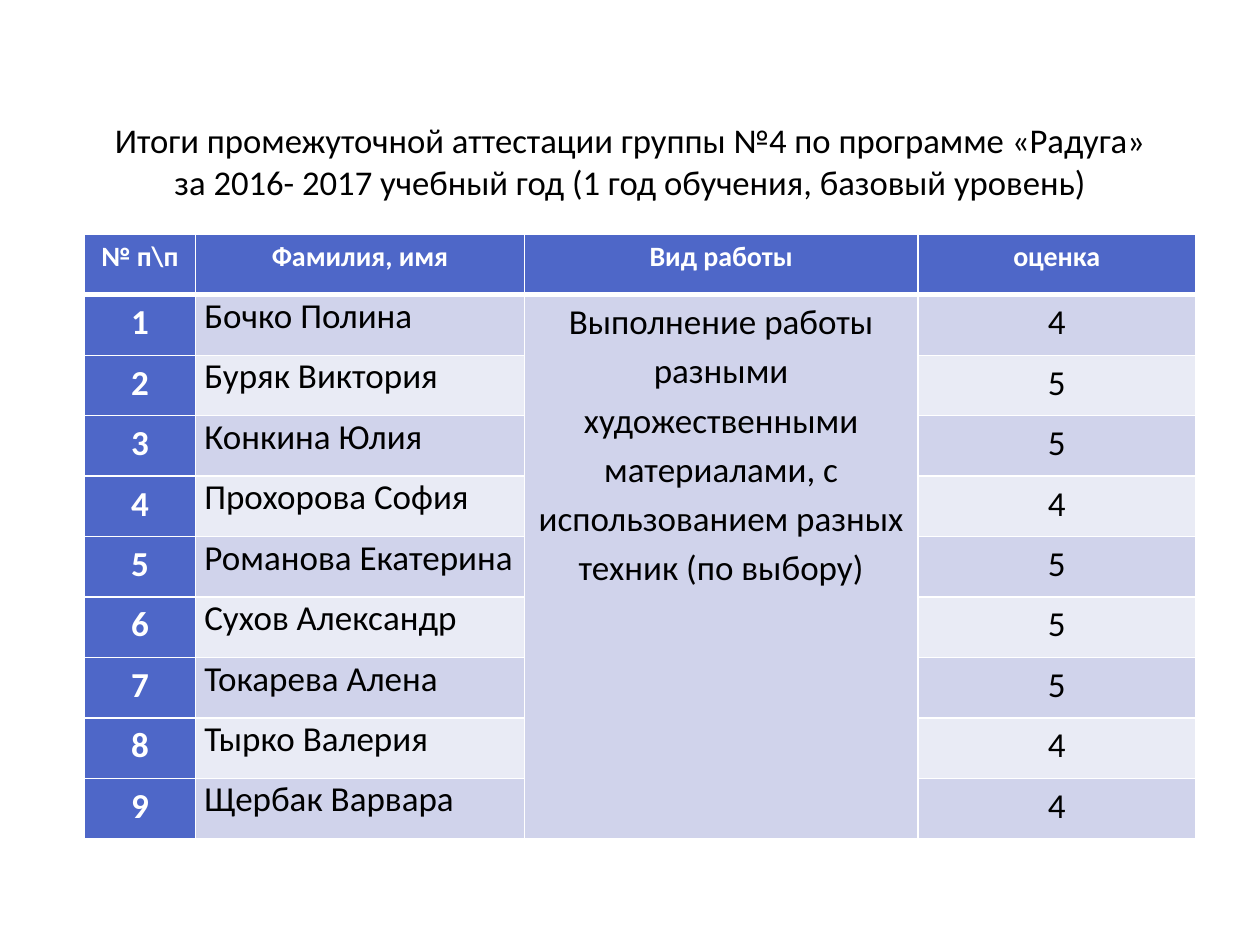
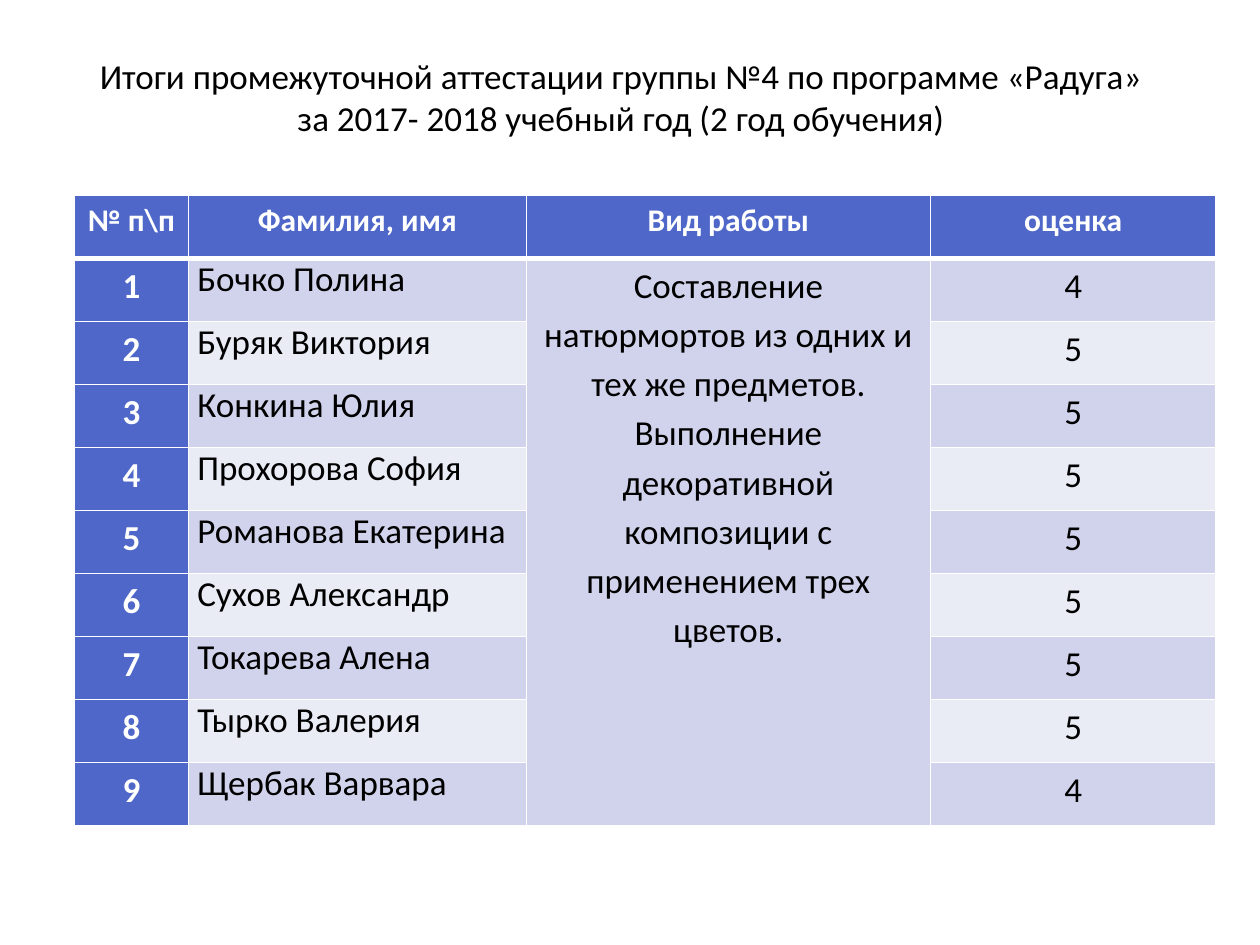
from lxml.etree import SubElement
from pptx import Presentation
from pptx.dml.color import RGBColor
from pptx.enum.text import MSO_ANCHOR, PP_ALIGN
from pptx.oxml.ns import qn
from pptx.util import Inches, Pt

FONT = "Calibri"
BLACK = RGBColor(0x00, 0x00, 0x00)
WHITE = RGBColor(0xFF, 0xFF, 0xFF)
BLUE = RGBColor(0x4E, 0x67, 0xC8)
BANDS = (RGBColor(0xE9, 0xEB, 0xF5), RGBColor(0xD0, 0xD3, 0xEB))

HEADINGS = ("№ п\\п", "Фамилия, имя", "Вид работы", "оценка")
PUPILS = (
    "Бочко Полина",
    "Буряк Виктория",
    "Конкина Юлия",
    "Прохорова София",
    "Романова Екатерина",
    "Сухов Александр",
    "Токарева Алена",
    "Тырко Валерия",
    "Щербак Варвара",
)
TITLE_START = "Итоги промежуточной аттестации группы №4 по программе «Радуга»"
YEARS = (
    {
        "title": "за 2016- 2017 учебный год (1 год обучения, базовый уровень)",
        "title_size": 19.8,
        "title_at": (0.5, 0.65),
        "work": ("Выполнение работы разными художественными материалами, "
                 "с использованием разных техник (по выбору)",),
        "grades": (4, 5, 5, 4, 5, 5, 5, 4, 4),
        "table_at": (0.67, 1.86),
        "table_width": 8.82,
        "row_height": 0.48,
        "heading_size": 16,
    },
    {
        "title": "за 2017- 2018 учебный год (2 год обучения)",
        "title_size": 20,
        "title_at": (0.43, 0.14),
        "work": ("Составление натюрмортов из одних и тех же предметов.",
                 "Выполнение декоративной композиции с применением трех цветов."),
        "grades": (4, 5, 5, 5, 5, 5, 5, 5, 4),
        "table_at": (0.59, 1.55),
        "table_width": 9.06,
        "row_height": 0.5,
        "heading_size": 18,
    },
)

TITLE_SIZE = (9, 1.25)
COLUMN_SHARES = (0.1, 0.296, 0.354, 0.25)
NUMBER, NAME, WORK, GRADE = range(4)
BODY_SIZE = 20
LINE_SPACING = 1.15
SIDE_MARGIN = 0.07
THIN, THICK = 1, 3


def write(frame, texts, size, color, bold=False, align=PP_ALIGN.CENTER, spacing=None):
    for index, text in enumerate(texts):
        para = frame.paragraphs[0] if index == 0 else frame.add_paragraph()
        para.alignment = align
        para.line_spacing = spacing
        span = para.add_run()
        span.text = text
        span.font.name = FONT
        span.font.size = Pt(size)
        span.font.bold = bold
        span.font.color.rgb = color


def add_title(page, year):
    box = page.shapes.add_textbox(*map(Inches, year["title_at"] + TITLE_SIZE))
    frame = box.text_frame
    frame.word_wrap = True
    frame.vertical_anchor = MSO_ANCHOR.MIDDLE
    write(frame, (TITLE_START, year["title"]), year["title_size"], BLACK)


def add_borders(cell, row):
    widths = {
        "a:lnL": THIN,
        "a:lnR": THIN,
        "a:lnT": THICK if row == 1 else THIN,
        "a:lnB": THICK if row == 0 else THIN,
    }
    properties = cell._tc.get_or_add_tcPr()
    for side, width in widths.items():
        line = SubElement(properties, qn(side), w=str(Pt(width)))
        fill = SubElement(line, qn("a:solidFill"))
        SubElement(fill, qn("a:srgbClr"), val=str(WHITE))


def style_cell(cell, row, column):
    cell.margin_left = cell.margin_right = Inches(SIDE_MARGIN)
    cell.margin_top = cell.margin_bottom = 0
    add_borders(cell, row)
    cell.fill.solid()
    if row == 0 or column == NUMBER:
        cell.fill.fore_color.rgb = BLUE
    else:
        cell.fill.fore_color.rgb = BANDS[1 if column == WORK else row % 2]


def add_grades(page, year):
    rows = [[(heading,) for heading in HEADINGS]]
    for number, (pupil, grade) in enumerate(zip(PUPILS, year["grades"]), 1):
        work = year["work"] if number == 1 else ()
        rows.append([(str(number),), (pupil,), work, (str(grade),)])

    width, row_height = year["table_width"], year["row_height"]
    table = page.shapes.add_table(
        len(rows), len(HEADINGS), *map(Inches, year["table_at"]),
        Inches(width), Inches(row_height * len(rows))).table
    for column, share in zip(table.columns, COLUMN_SHARES):
        column.width = Inches(width * share)
    for table_row in table.rows:
        table_row.height = Inches(row_height)
    table.cell(1, WORK).merge(table.cell(len(PUPILS), WORK))

    for row, contents in enumerate(rows):
        for column, texts in enumerate(contents):
            cell = table.cell(row, column)
            style_cell(cell, row, column)
            strong = row == 0 or column == NUMBER
            is_name = row > 0 and column == NAME
            write(
                cell.text_frame, texts,
                year["heading_size"] if row == 0 else BODY_SIZE,
                WHITE if strong else BLACK,
                bold=strong,
                align=PP_ALIGN.LEFT if is_name else PP_ALIGN.CENTER,
                spacing=None if is_name else LINE_SPACING,
            )


def main():
    deck = Presentation()
    deck.slide_width, deck.slide_height = Inches(10), Inches(7.5)
    for year in YEARS:
        page = deck.slides.add_slide(deck.slide_layouts[6])
        add_title(page, year)
        add_grades(page, year)
    deck.save("out.pptx")


if __name__ == "__main__":
    main()
